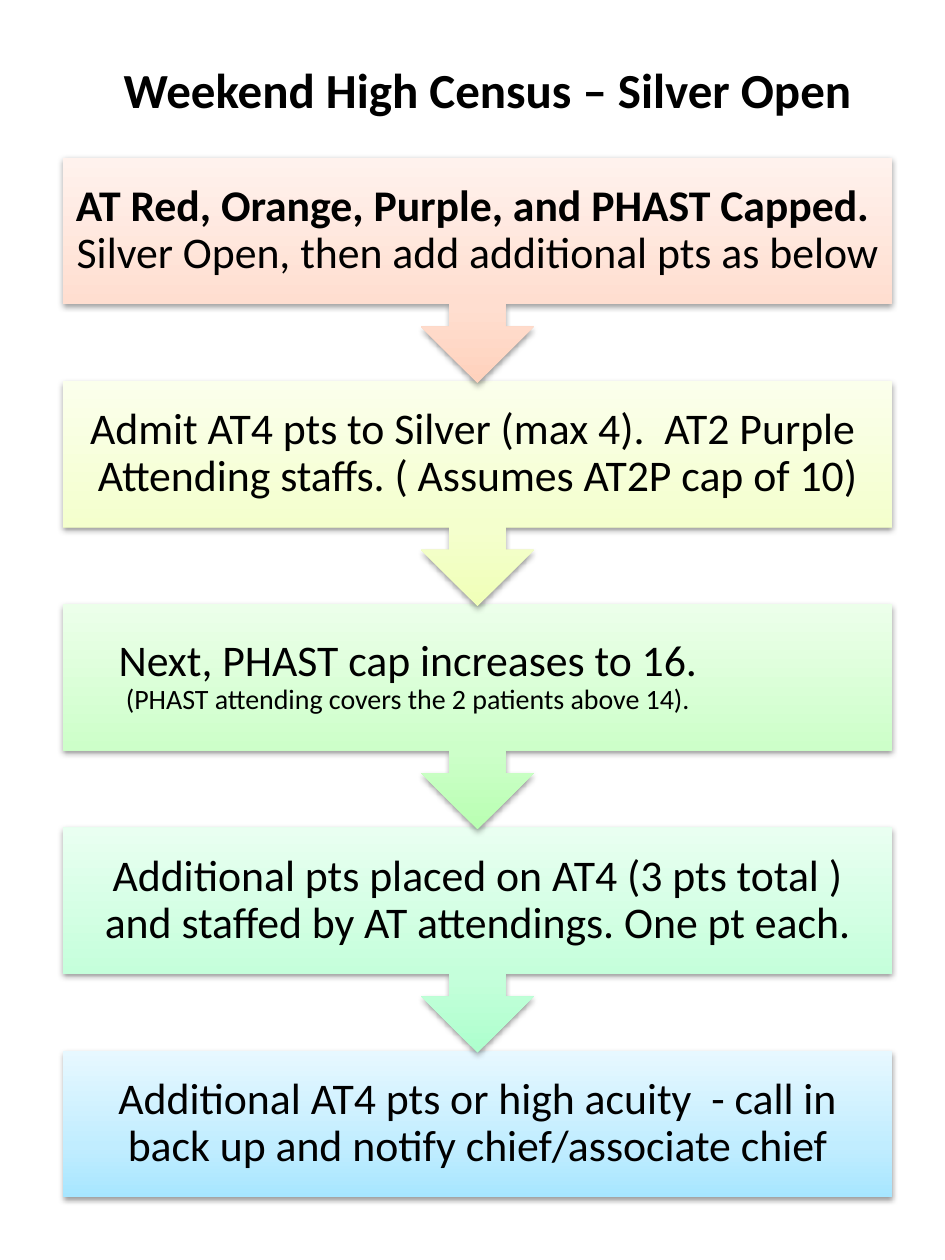
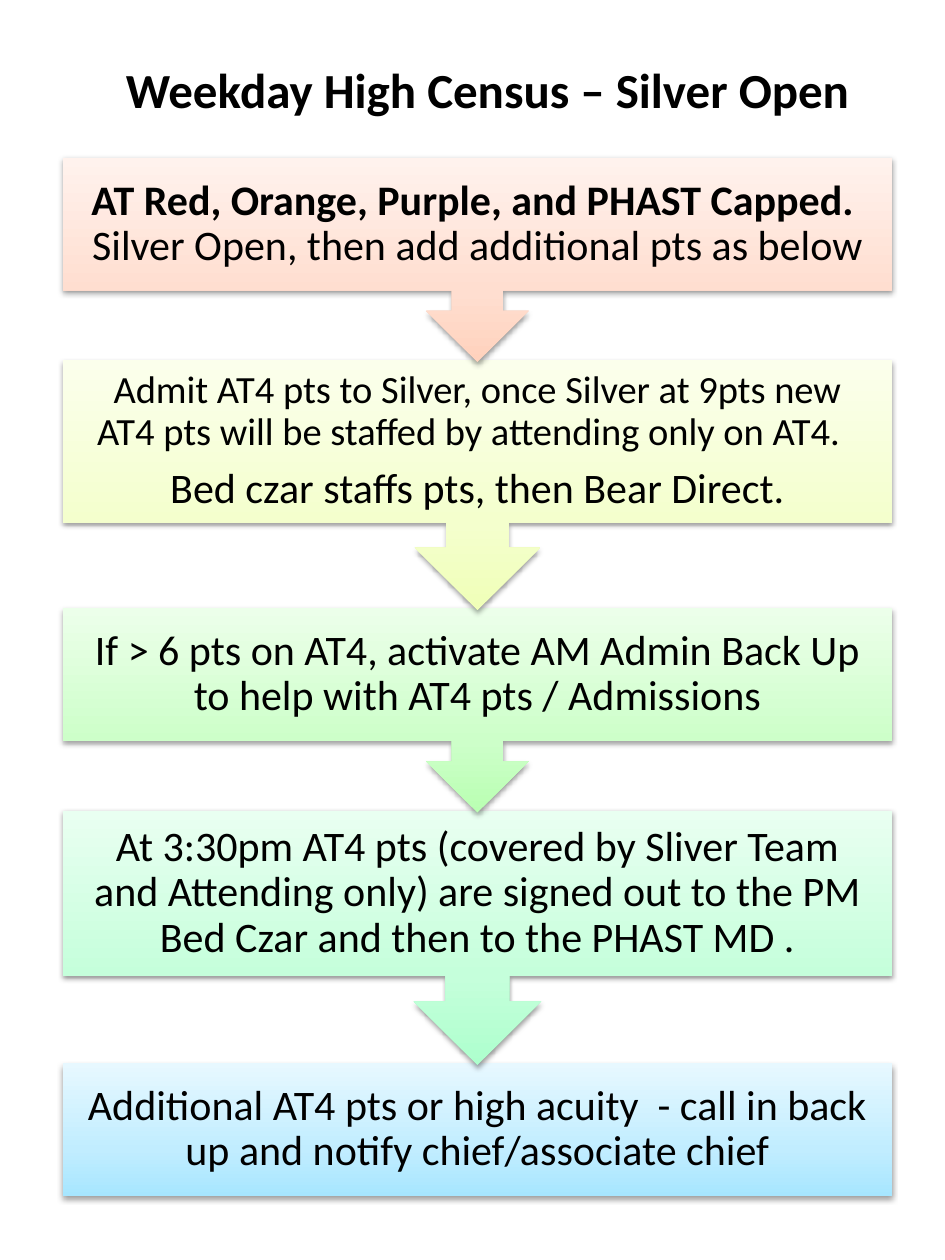
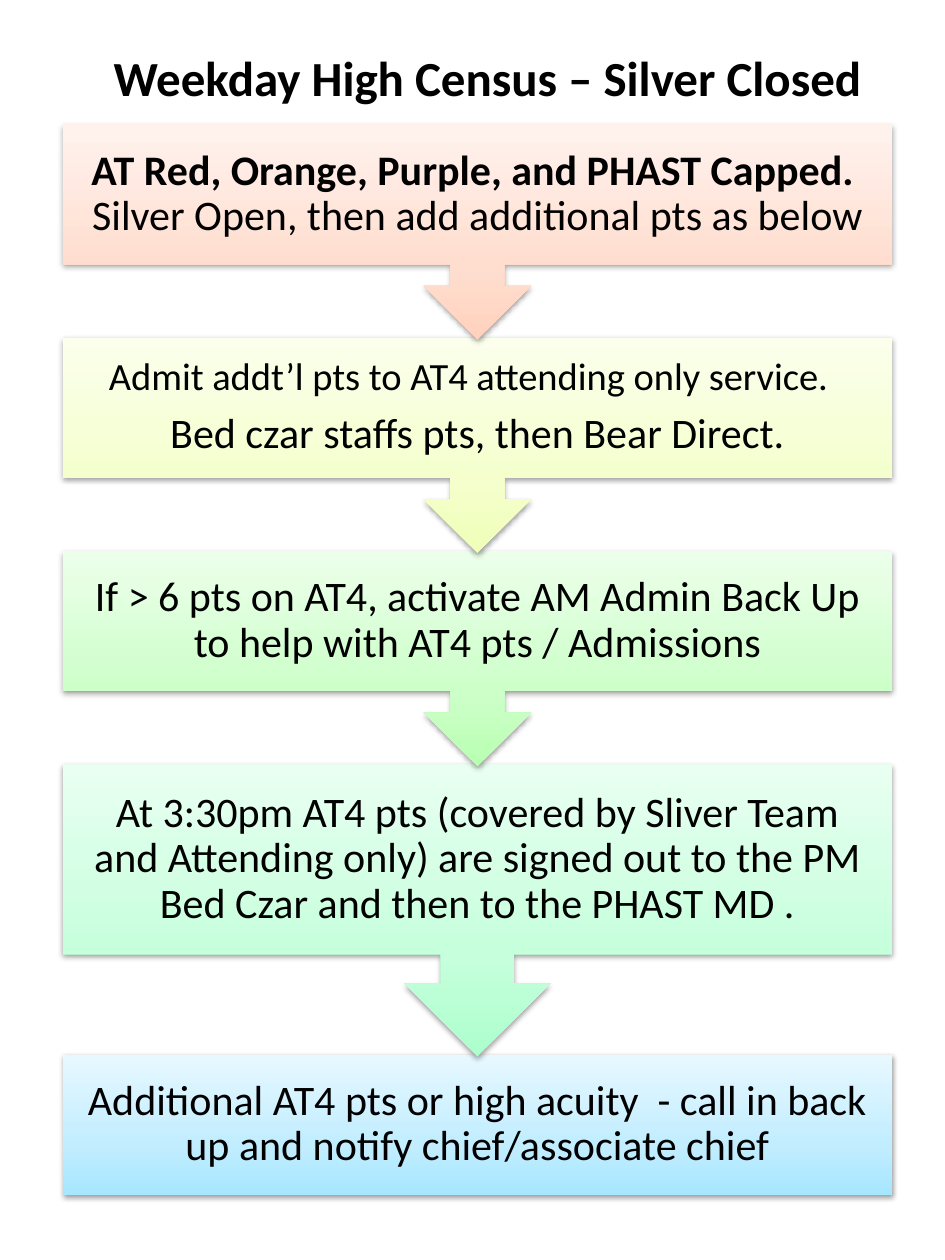
"""Build three high-census escalation flowcharts."""
from copy import deepcopy
from itertools import accumulate

from pptx import Presentation
from pptx.dml.color import RGBColor
from pptx.enum.shapes import MSO_SHAPE as Shape
from pptx.enum.text import MSO_ANCHOR as Anchor, MSO_AUTO_SIZE as AutoSize, PP_ALIGN as Align
from pptx.oxml import parse_xml
from pptx.oxml.ns import nsdecls, qn
from pptx.util import Cm, Pt

FONT = "Calibri"
TEXT_COLOR = "000000"
GRADIENTS = [
    ("FFD2BD", "FFDED0", "FFF2ED"),
    ("F0FFB8", "F4FFCD", "FBFFEC"),
    ("B9FFB2", "CDFFC9", "ECFFEA"),
    ("ADFFCD", "C5FFDB", "E9FFF1"),
    ("A7E6FF", "C1EDFF", "E7F8FF"),
]
STOPS = (0, 0.35, 1)
LEFT, WIDTH = 1.27, 16.71
OVERLAP = 0.04
BOX_SHARE = 0.65
INSETS = (0, 0.45, 0.48, 0.48, 0.48)
SHADOW = (
    f'<a:outerShdw {nsdecls("a")} blurRad="40000" dist="20000" dir="5400000" rotWithShape="0">'
    '<a:srgbClr val="000000"><a:alpha val="38000"/></a:srgbClr></a:outerShdw>'
)

CAPPED = "AT Red, Orange, Purple, and PHAST Capped.  "
SILVER_OPEN = "Silver Open, then add additional pts as below"
BED_CZAR = "Bed czar staffs pts, then Bear Direct."
BACK_UP = "If > 6 pts on AT4, activate AM Admin Back Up to help with AT4 pts / Admissions"
SIGN_OUT = ("At 3:30pm AT4 pts (covered by Sliver Team and Attending only) "
            "are signed out to the PM Bed Czar and then to the PHAST MD .")
CALL_IN = "Additional AT4 pts or high acuity  - call in back up and notify chief/associate chief"

FLOWS = [
    {
        "title": "Weekend High Census – Silver Open", "title_top": 1.07, "top": 3.18, "size": 25,
        "heights": (4.54, 4.54, 4.54, 4.54),
        "middle": [
            [("Admit AT4 pts to Silver (max 4).  AT2 Purple  Attending staffs. "
              "( Assumes AT2P cap of 10)", 25)],
            [("Next, PHAST cap increases to 16.", 25),
             ("(PHAST attending covers the 2 patients above 14).", 16)],
            [("Additional pts placed on AT4 (3 pts total ) and staffed by AT attendings. "
              "One pt each.", 25)],
        ],
    },
    {
        "title": "Weekday High Census – Silver Open", "title_top": 1.07, "top": 3.18, "size": 24,
        "heights": (4.12, 5.04, 4.12, 5.13),
        "middle": [
            [("Admit AT4 pts to Silver, once Silver at 9pts new AT4 pts will be staffed "
              "by attending only on AT4.  ", 22), (BED_CZAR, 24)],
            [(BACK_UP, 24)],
            [(SIGN_OUT, 24)],
        ],
    },
    {
        "title": "Weekday High Census – Silver Closed", "title_top": 0.84, "top": 2.51, "size": 24,
        "heights": (4.34, 4.34, 4.34, 5.89),
        "middle": [
            [("Admit addt’l pts to AT4 attending only service.  ", 22), (BED_CZAR, 24)],
            [(BACK_UP, 24)],
            [(SIGN_OUT, 24)],
        ],
    },
]


def color(value):
    return RGBColor.from_string(value)


def format_run(run, size, bold=False):
    run.font.name = FONT
    run.font.size = Pt(size)
    run.font.bold = bold
    run.font.color.rgb = color(TEXT_COLOR)


presentation = Presentation()
presentation.slide_width, presentation.slide_height = Cm(19.05), Cm(25.4)

for flow in FLOWS:
    slide = presentation.slides.add_slide(presentation.slide_layouts[6])
    size = flow["size"]
    heights = [*flow["heights"], BOX_SHARE * flow["heights"][0]]
    tops = accumulate((height - OVERLAP for height in flow["heights"]), initial=flow["top"])
    texts = [[(CAPPED, size)], *flow["middle"], [(CALL_IN, size)]]
    steps = list(zip(tops, heights, texts, GRADIENTS, INSETS))

    for number, (top, height, lines, gradient, inset) in reversed(list(enumerate(steps))):
        kind = Shape.RECTANGLE if number == len(steps) - 1 else Shape.DOWN_ARROW_CALLOUT
        shape = slide.shapes.add_shape(kind, Cm(LEFT), Cm(top), Cm(WIDTH), Cm(height))
        shape.line.fill.background()
        shape.shadow.inherit = False
        properties = shape._element.spPr
        properties.find(qn("a:effectLst")).append(parse_xml(SHADOW))

        shape.fill.gradient()
        shape.fill.gradient_angle = 90
        stop_list = properties.find(".//" + qn("a:gsLst"))
        stop_list.append(deepcopy(stop_list[0]))
        for stop, position, value in zip(shape.fill.gradient_stops, STOPS, gradient):
            stop.position = position
            stop.color.rgb = color(value)

        frame = shape.text_frame
        frame.word_wrap = True
        frame.vertical_anchor = Anchor.MIDDLE
        frame.margin_left = frame.margin_right = Cm(inset)
        frame.margin_top = frame.margin_bottom = Cm(inset)
        frame.text = "\n".join(text for text, _ in lines)
        for paragraph, (text, text_size) in zip(frame.paragraphs, lines):
            paragraph.alignment = Align.CENTER
            paragraph.line_spacing = 0.9
            paragraph.space_after = Pt(0.35 * text_size)
            format_run(paragraph.runs[0], text_size, bold=text == CAPPED)
            if text == CAPPED:
                run = paragraph.add_run()
                run.text = SILVER_OPEN
                format_run(run, text_size)
            if text.startswith("Next, PHAST"):
                paragraph.space_after = Pt(0)
                paragraph._p.get_or_add_pPr().set("marR", str(Cm(2.8)))

    title = slide.shapes.add_textbox(Cm(1.47), Cm(flow["title_top"]), Cm(WIDTH), Cm(1.45))
    title.text_frame.word_wrap = True
    title.text_frame.auto_size = AutoSize.SHAPE_TO_FIT_TEXT
    title.text_frame.text = flow["title"]
    paragraph = title.text_frame.paragraphs[0]
    paragraph.alignment = Align.CENTER
    format_run(paragraph.runs[0], 28, bold=True)

presentation.save("out.pptx")
